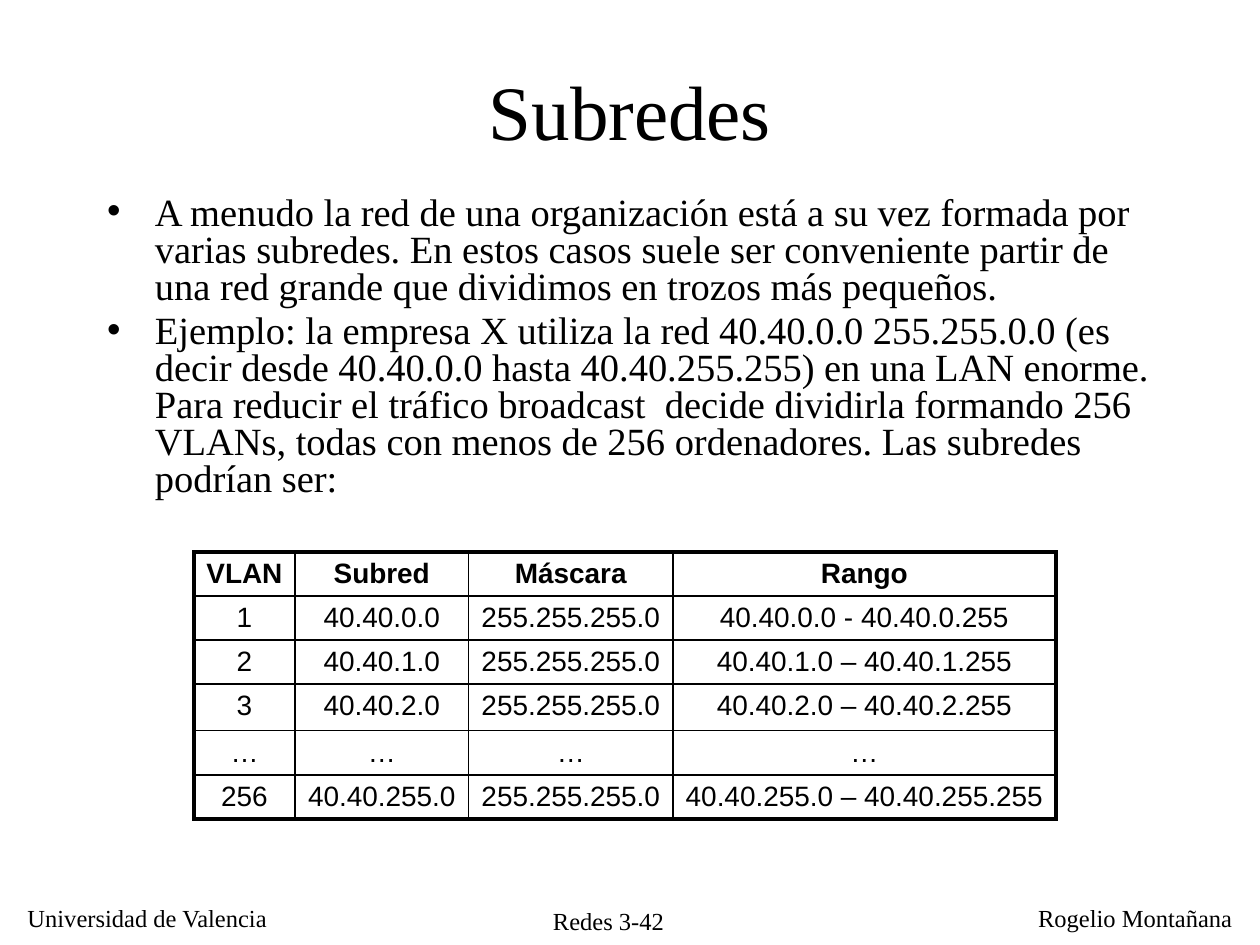
from lxml.etree import SubElement
from pptx import Presentation
from pptx.dml.color import RGBColor
from pptx.enum.text import MSO_ANCHOR, MSO_AUTO_SIZE, PP_ALIGN
from pptx.oxml.ns import qn
from pptx.util import Inches, Pt

BLACK = RGBColor(0, 0, 0)
SERIF = "Times New Roman"
SANS = "Arial"
THIN, THICK = 1, 2.25

BULLETS = [
    "A menudo la red de una organización está a su vez formada por varias subredes. "
    "En estos casos suele ser conveniente partir de una red grande que dividimos en "
    "trozos más pequeños.",
    "Ejemplo: la empresa X utiliza la red 40.40.0.0 255.255.0.0 (es decir desde "
    "40.40.0.0 hasta 40.40.255.255) en una LAN enorme. Para reducir el tráfico "
    "broadcast  decide dividirla formando 256 VLANs, todas con menos de 256 "
    "ordenadores. Las subredes podrían ser:",
]
MASK = "255.255.255.0"
SUBNETS = [
    ["VLAN", "Subred", "Máscara", "Rango"],
    ["1", "40.40.0.0", MASK, "40.40.0.0 - 40.40.0.255"],
    ["2", "40.40.1.0", MASK, "40.40.1.0 – 40.40.1.255"],
    ["3", "40.40.2.0", MASK, "40.40.2.0 – 40.40.2.255"],
    ["…"] * 4,
    ["256", "40.40.255.0", MASK, "40.40.255.0 – 40.40.255.255"],
]
COLUMN_WIDTHS = [0.8, 1.38, 1.62, 3.04]
ROW_HEIGHTS = [0.35, 0.35, 0.35, 0.37, 0.35, 0.35]


class SlideBuilder:
    def __init__(self, slide):
        self.slide = slide

    def format(self, paragraph, size, font=SERIF, align=PP_ALIGN.LEFT, bold=False):
        paragraph.alignment = align
        paragraph.font.size = Pt(size)
        paragraph.font.name = font
        paragraph.font.bold = bold
        paragraph.font.color.rgb = BLACK

    def space_before_percent(self, paragraph, percent):
        """Set the spacing as a share of the text size."""
        paragraph.space_before = Pt(0)
        spacing = paragraph._p.pPr.find(qn("a:spcBef"))
        spacing.remove(spacing[0])
        SubElement(spacing, qn("a:spcPct"), val=str(percent * 1000))

    def place(self, shape, left, top, width, height):
        shape.left, shape.top = Inches(left), Inches(top)
        shape.width, shape.height = Inches(width), Inches(height)

    def title(self, text, *box):
        shape = self.slide.shapes.title
        self.place(shape, *box)
        frame = shape.text_frame
        frame.text = text
        frame.auto_size = MSO_AUTO_SIZE.NONE
        frame.vertical_anchor = MSO_ANCHOR.MIDDLE
        self.format(frame.paragraphs[0], 44, align=PP_ALIGN.CENTER)

    def bullets(self, texts, *box):
        shape = self.slide.placeholders[1]
        self.place(shape, *box)
        frame = shape.text_frame
        frame.text = "\n".join(texts)
        frame.auto_size = MSO_AUTO_SIZE.NONE
        for paragraph in frame.paragraphs:
            self.format(paragraph, 22)
            paragraph.line_spacing = 0.8
            self.space_before_percent(paragraph, 20)
            properties = paragraph._p.pPr
            properties.set("marL", str(Inches(0.38)))
            properties.set("indent", str(-Inches(0.38)))

    def footer(self, text, align, *box):
        shape = self.slide.shapes.add_textbox(*map(Inches, box))
        shape.text_frame.text = text
        shape.text_frame.word_wrap = False
        self.format(shape.text_frame.paragraphs[0], 14, align=align)

    def border(self, cell, side, width):
        line = SubElement(cell._tc.get_or_add_tcPr(), qn(f"a:ln{side}"), w=str(Pt(width)))
        fill = SubElement(line, qn("a:solidFill"))
        SubElement(fill, qn("a:srgbClr"), val=str(BLACK))

    def table(self, rows, left, top):
        last_row, last_column = len(rows) - 1, len(COLUMN_WIDTHS) - 1
        table = self.slide.shapes.add_table(
            len(rows), len(COLUMN_WIDTHS), Inches(left), Inches(top),
            Inches(sum(COLUMN_WIDTHS)), Inches(sum(ROW_HEIGHTS))).table
        table.first_row = table.horz_banding = False
        for column, width in zip(table.columns, COLUMN_WIDTHS):
            column.width = Inches(width)
        for row, height in zip(table.rows, ROW_HEIGHTS):
            row.height = Inches(height)
        for r, texts in enumerate(rows):
            for c, text in enumerate(texts):
                cell = table.cell(r, c)
                cell.text = text
                cell.margin_left = cell.margin_right = Inches(0.07)
                cell.margin_bottom = Inches(0.02)
                paragraph = cell.text_frame.paragraphs[0]
                self.format(paragraph, 16, SANS, PP_ALIGN.CENTER, bold=r == 0)
                self.space_before_percent(paragraph, 20)
                outer_sides = {"L": c == 0, "R": c == last_column,
                               "T": r == 0, "B": r == last_row}
                for side, outer in outer_sides.items():
                    self.border(cell, side, THICK if outer else THIN)
                cell.fill.background()


def main():
    presentation = Presentation()
    presentation.slide_width = Inches(10)
    presentation.slide_height = Inches(7.5)
    builder = SlideBuilder(presentation.slides.add_slide(presentation.slide_layouts[1]))
    builder.footer("Redes 3-42", PP_ALIGN.CENTER, 4.18, 7.14, 1.3, 0.3)
    builder.footer("Universidad de Valencia", PP_ALIGN.LEFT, 0.12, 7.12, 2.13, 0.33)
    builder.footer("Rogelio Montañana", PP_ALIGN.LEFT, 8.14, 7.12, 1.74, 0.33)
    builder.title("Subredes", 0.75, 0.39, 8.5, 0.96)
    builder.bullets(BULLETS, 0.75, 1.51, 8.58, 2.21)
    builder.table(SUBNETS, 1.54, 4.38)
    presentation.save("out.pptx")


if __name__ == "__main__":
    main()
